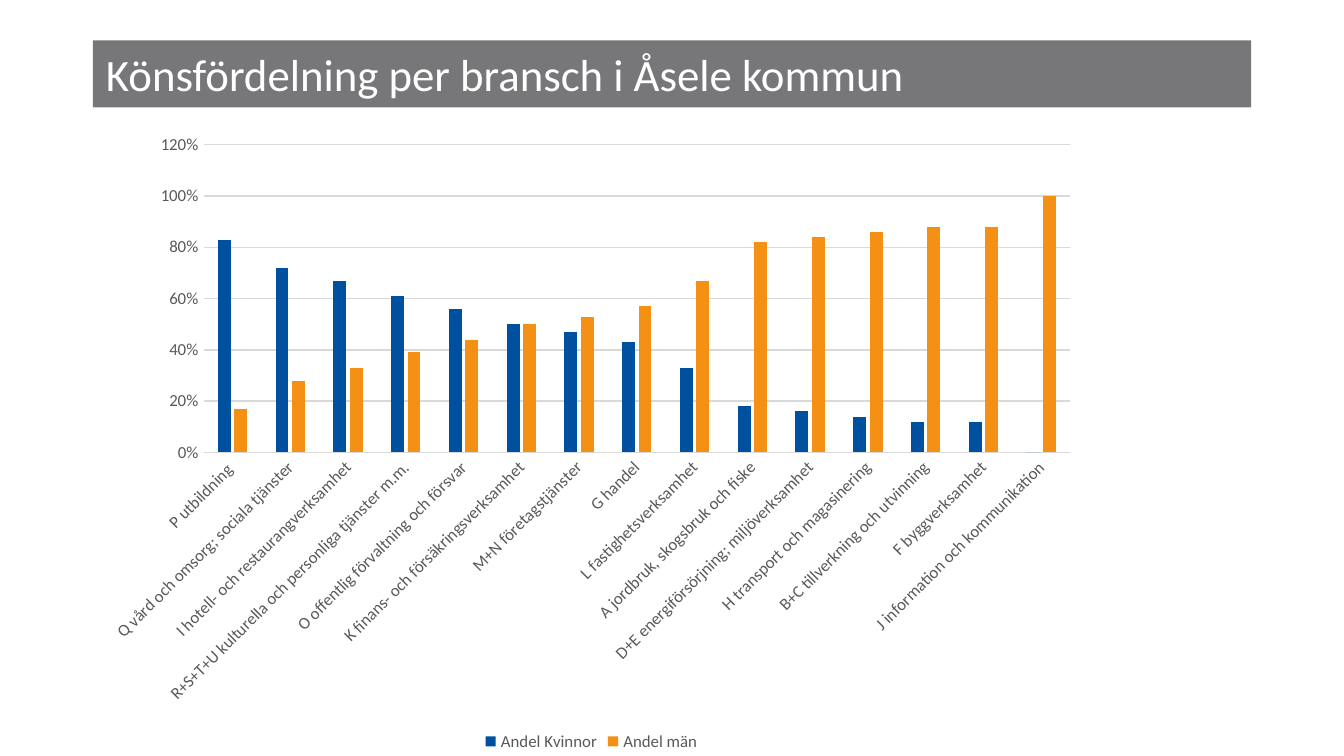
from pptx import Presentation
from pptx.chart.data import CategoryChartData
from pptx.dml.color import RGBColor
from pptx.enum.chart import XL_CHART_TYPE, XL_LEGEND_POSITION, XL_TICK_MARK
from pptx.enum.shapes import MSO_SHAPE
from pptx.enum.text import MSO_ANCHOR, PP_ALIGN
from pptx.util import Inches, Pt

COLUMNS = XL_CHART_TYPE.COLUMN_CLUSTERED
BOTTOM = XL_LEGEND_POSITION.BOTTOM
NO_TICK = XL_TICK_MARK.NONE
RECTANGLE = MSO_SHAPE.RECTANGLE
MIDDLE = MSO_ANCHOR.MIDDLE
LEFT = PP_ALIGN.LEFT

FONT = "Calibri"
WHITE = RGBColor(0xFF, 0xFF, 0xFF)
BLACK = RGBColor(0x00, 0x00, 0x00)
BANNER_GREY = RGBColor(0x77, 0x77, 0x7A)
LABEL_GREY = RGBColor(0x59, 0x59, 0x59)
GRID_GREY = RGBColor(0xD9, 0xD9, 0xD9)
WOMEN_BLUE = RGBColor(0x00, 0x50, 0xA0)
MEN_ORANGE = RGBColor(0xF4, 0x90, 0x14)

SLIDE_WIDTH = Inches(10)
SLIDE_HEIGHT = SLIDE_WIDTH * 9 // 16
LEFT_MARGIN = Inches(0.69)
LABEL_ROTATION = "-2700000"

WOMEN_BY_INDUSTRY = {
    "P utbildning ": 0.83,
    "Q vård och omsorg; sociala tjänster": 0.72,
    "I hotell- och restaurangverksamhet": 0.67,
    "R+S+T+U kulturella och personliga tjänster m.m.": 0.61,
    "O offentlig förvaltning och försvar": 0.56,
    "K finans- och försäkringsverksamhet": 0.5,
    "M+N företagstjänster": 0.47,
    "G handel": 0.43,
    "L fastighetsverksamhet": 0.33,
    "A jordbruk, skogsbruk och fiske": 0.18,
    "D+E energiförsörjning; miljöverksamhet": 0.16,
    "H transport och magasinering": 0.14,
    "B+C tillverkning och utvinning": 0.12,
    "F byggverksamhet": 0.12,
    "J information och kommunikation": 0,
}


def style_font(font, size, color):
    font.name = FONT
    font.size = Pt(size)
    font.color.rgb = color


def style_line(line, color):
    line.color.rgb = color
    line.width = Pt(0.75)


def add_title_banner(slide, text):
    banner = slide.shapes.add_shape(
        RECTANGLE, LEFT_MARGIN, Inches(0.3), Inches(8.62), Inches(0.5)
    )
    banner.shadow.inherit = False
    banner.fill.solid()
    banner.fill.fore_color.rgb = BANNER_GREY
    banner.line.fill.background()
    frame = banner.text_frame
    frame.word_wrap = True
    frame.vertical_anchor = MIDDLE
    paragraph = frame.paragraphs[0]
    paragraph.alignment = LEFT
    run = paragraph.add_run()
    run.text = text
    style_font(run.font, 24, WHITE)


def style_axes(chart):
    industries, shares = chart.category_axis, chart.value_axis
    for axis in (industries, shares):
        axis.major_tick_mark = NO_TICK
        axis.minor_tick_mark = NO_TICK
        style_font(axis.tick_labels.font, 9, LABEL_GREY)
    style_line(industries.format.line, GRID_GREY)
    label_body = industries._element.get_or_add_txPr().bodyPr
    label_body.set("rot", LABEL_ROTATION)
    label_body.set("vert", "horz")

    shares.minimum_scale = 0
    shares.maximum_scale = 1.2
    shares.major_unit = 0.2
    shares.format.line.fill.background()
    shares.has_major_gridlines = True
    style_line(shares.major_gridlines.format.line, GRID_GREY)
    shares.tick_labels.number_format = "0%"
    shares.tick_labels.number_format_is_linked = False


def add_share_chart(slide):
    women = list(WOMEN_BY_INDUSTRY.values())
    shares = CategoryChartData(number_format="0%")
    shares.categories = list(WOMEN_BY_INDUSTRY)
    shares.add_series("Andel Kvinnor", women)
    shares.add_series("Andel män", [round(1 - share, 2) for share in women])
    chart = slide.shapes.add_chart(
        COLUMNS, LEFT_MARGIN, Inches(0.91), Inches(7.42), Inches(4.72), shares
    ).chart
    style_font(chart.font, 10, BLACK)
    chart.has_title = False
    chart.has_legend = True
    chart.legend.position = BOTTOM
    chart.legend.include_in_layout = False
    style_font(chart.legend.font, 9, LABEL_GREY)

    plot = chart.plots[0]
    plot.gap_width = 219
    plot.overlap = -27
    plot.vary_by_categories = False
    for series, color in zip(plot.series, (WOMEN_BLUE, MEN_ORANGE)):
        series.invert_if_negative = False
        series.format.fill.solid()
        series.format.fill.fore_color.rgb = color
    style_axes(chart)


def main():
    presentation = Presentation()
    presentation.slide_width = SLIDE_WIDTH
    presentation.slide_height = SLIDE_HEIGHT
    slide = presentation.slides.add_slide(presentation.slide_layouts[6])
    add_title_banner(slide, "Könsfördelning per bransch i Åsele kommun")
    add_share_chart(slide)
    presentation.save("out.pptx")


if __name__ == "__main__":
    main()
